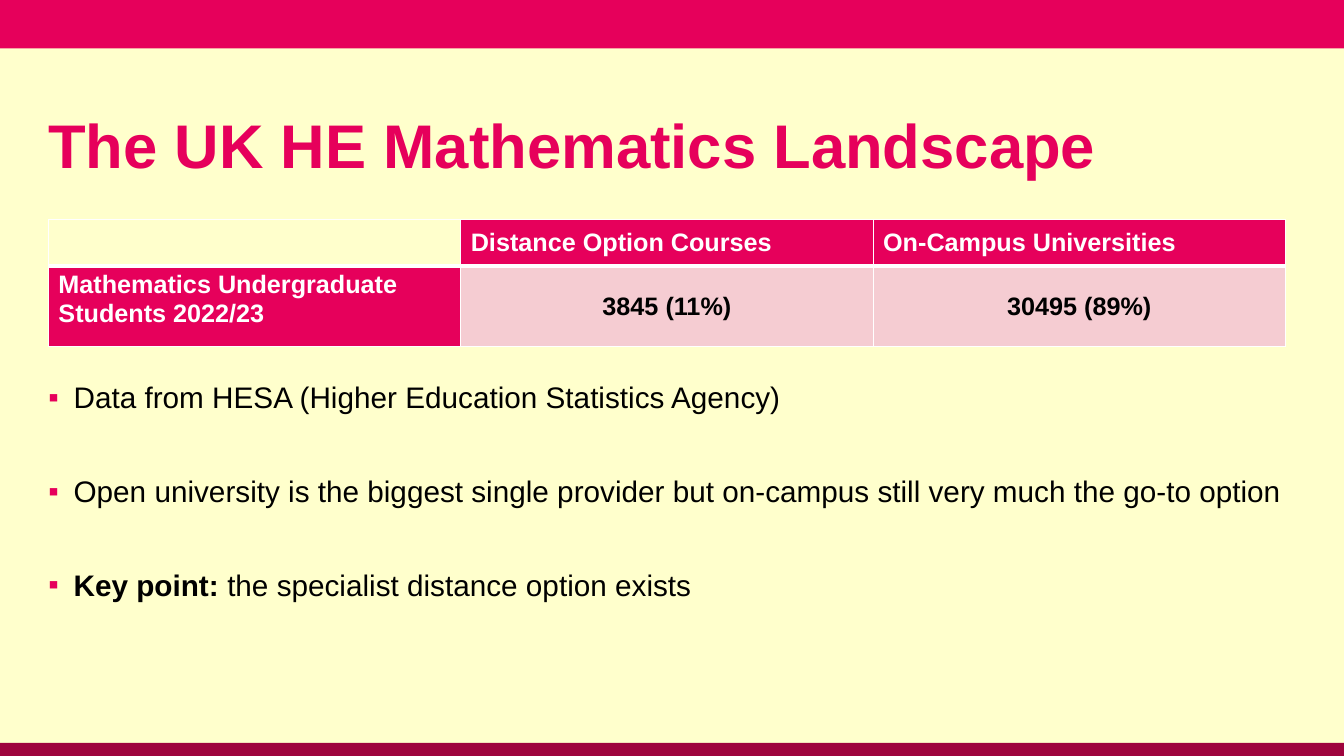
from lxml import etree
from pptx import Presentation
from pptx.dml.color import RGBColor
from pptx.enum.shapes import MSO_SHAPE
from pptx.enum.text import MSO_ANCHOR, MSO_AUTO_SIZE, PP_ALIGN
from pptx.oxml import parse_xml
from pptx.oxml.ns import nsdecls, qn
from pptx.util import Inches, Pt

COLORS = {"cream": "FFFFCC", "pink": "E6005B", "crimson": "9E043D",
          "blush": "F5CCD2", "white": "FFFFFF", "black": "000000"}
FONT = "Arial"


def rgb(name):
    return RGBColor.from_string(COLORS[name])


def add_run(p, text, size, color, bold):
    r = p.add_run()
    r.text = text
    r.font.name, r.font.size, r.font.bold = FONT, Pt(size), bold
    r.font.color.rgb = rgb(color)


prs = Presentation()
prs.slide_width, prs.slide_height = Inches(13.33), Inches(7.5)
slide = prs.slides.add_slide(prs.slide_layouts[1])
slide.background.fill.solid()
slide.background.fill.fore_color.rgb = rgb("cream")

# Bands at the top and bottom edges
for top, height, color in [(0, 0.48, "pink"), (7.37, 0.13, "crimson")]:
    band = slide.shapes.add_shape(MSO_SHAPE.RECTANGLE, 0, Inches(top),
                                  prs.slide_width, Inches(height))
    band.shadow.inherit = False
    band.fill.solid()
    band.fill.fore_color.rgb = rgb(color)
    band.line.fill.background()

# Title and body placeholders
title, body = slide.shapes.title, slide.placeholders[1]
for sp, top, height, anchor in [(title, 0.88, 1.1, MSO_ANCHOR.MIDDLE),
                                (body, 3.75, 2.48, MSO_ANCHOR.TOP)]:
    sp.left, sp.top = Inches(0.48), Inches(top)
    sp.width, sp.height = Inches(12.36), Inches(height)
    tf = sp.text_frame
    tf.word_wrap = True
    tf.auto_size = MSO_AUTO_SIZE.NONE
    tf.vertical_anchor = anchor
    tf.margin_left, tf.margin_right = 0, Inches(0.05)
    tf.margin_top = tf.margin_bottom = Inches(0.05)

p = title.text_frame.paragraphs[0]
p.alignment = PP_ALIGN.LEFT
add_run(p, "The UK HE Mathematics Landscape", 44, "pink", True)

# Student numbers
rows = [["", "Distance Option Courses", "On-Campus Universities"],
        ["Mathematics Undergraduate Students 2022/23", "3845 (11%)", "30495 (89%)"]]
table = slide.shapes.add_table(2, 3, Inches(0.48), Inches(2.18),
                               Inches(12.28), Inches(1.26)).table
table.first_row = table.horz_banding = False
for column in table.columns:
    column.width = Inches(4.09)
for row, height in zip(table.rows, (0.46, 0.8)):
    row.height = Inches(height)

for i, texts in enumerate(rows):
    for j, text in enumerate(texts):
        cell = table.cell(i, j)
        is_value = i == 1 and j > 0
        tcPr = cell._tc.get_or_add_tcPr()
        header_rule = "lnB" if i == 0 else "lnT"
        for side in ("lnL", "lnR", "lnT", "lnB"):
            width = Pt(3 if side == header_rule else 1)
            tcPr.append(parse_xml(
                f'<a:{side} {nsdecls("a")} w="{width}"><a:solidFill>'
                f'<a:srgbClr val="{COLORS["white"]}"/></a:solidFill></a:{side}>'))
        cell.fill.solid()
        cell.fill.fore_color.rgb = rgb(
            "blush" if is_value else "pink" if text else "cream")
        cell.vertical_anchor = MSO_ANCHOR.MIDDLE if j > 0 else MSO_ANCHOR.TOP
        if text:
            p = cell.text_frame.paragraphs[0]
            p.alignment = PP_ALIGN.CENTER if is_value else PP_ALIGN.LEFT
            add_run(p, text, 18, "black" if is_value else "white", True)

# Bullets: each is a list of (text, bold)
bullets = [
    [("Data from HESA (Higher Education Statistics Agency)", False)],
    [("Open university is the biggest single provider but on-campus "
      "still very much the go-to option", False)],
    [("Key point: ", True), ("the specialist distance option exists", False)],
]
tf = body.text_frame
for i, runs in enumerate(bullets):
    p = tf.add_paragraph() if i else tf.paragraphs[0]
    p.line_spacing = 0.9
    p.space_before = Pt(44 if i else 0)
    pPr = p._p.get_or_add_pPr()
    pPr.set("marL", str(Inches(0.25)))
    pPr.set("indent", str(-Inches(0.25)))
    color = etree.SubElement(pPr, qn("a:buClr"))
    etree.SubElement(color, qn("a:srgbClr"), val=COLORS["pink"])
    etree.SubElement(pPr, qn("a:buFont"), typeface=FONT)
    etree.SubElement(pPr, qn("a:buChar"), char="▪")
    for text, bold in runs:
        add_run(p, text, 21.2, "black", bold)

prs.save("out.pptx")
